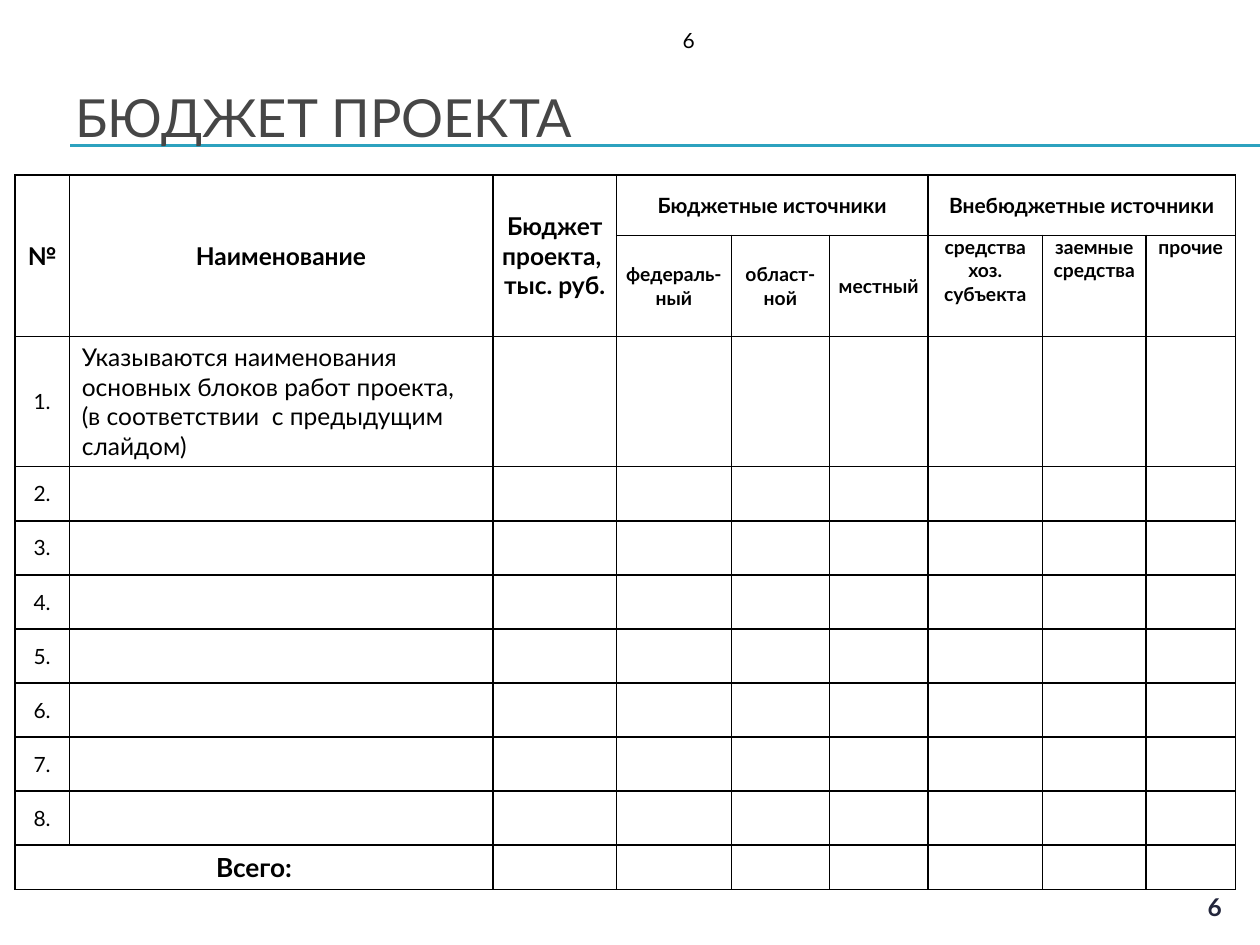
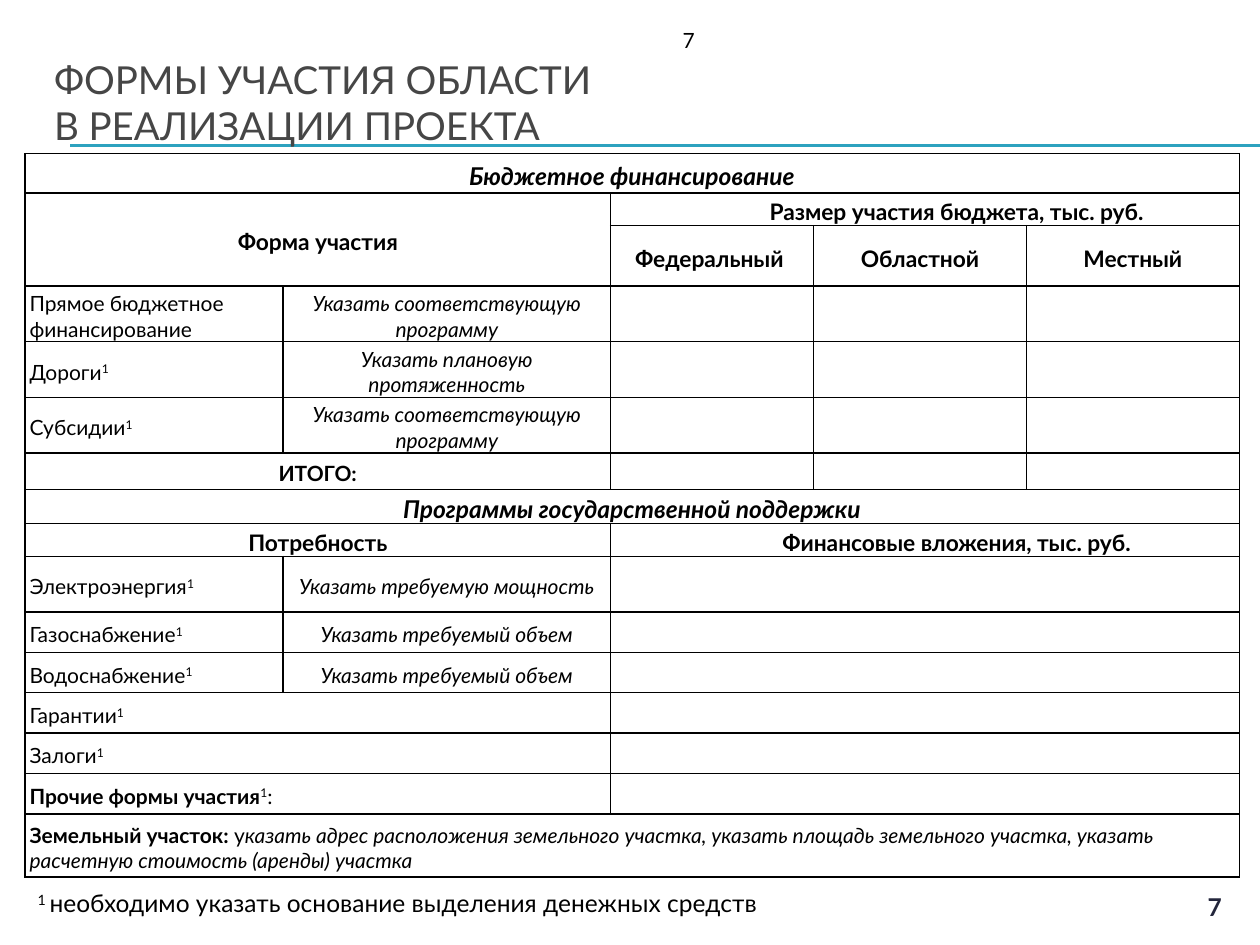
from lxml import etree
from pptx import Presentation
from pptx.dml.color import RGBColor
from pptx.enum.shapes import MSO_CONNECTOR
from pptx.enum.text import MSO_ANCHOR as Anchor, PP_ALIGN as Align
from pptx.oxml import parse_xml
from pptx.oxml.ns import nsdecls, qn
from pptx.util import Pt

FONT = "Lato"
BLACK = RGBColor(0x00, 0x00, 0x00)
TITLE_GREY = RGBColor(0x46, 0x46, 0x46)
RULE_TEAL = RGBColor(0x2D, 0xA2, 0xBF)
NUMBER_NAVY = RGBColor(0x23, 0x26, 0x3C)

SLIDE_WIDTH, SLIDE_HEIGHT = 720, 540
RULE_LEFT, RULE_TOPS = 40.3, (82.8, 83.5)
TOP_NUMBER_BOX = (383, 12.2, 21.6, 21.6)
BOTTOM_NUMBER_BOX = (680.4, 506.2, 27.4, 22.3)
TIGHT = (2.7, 2.7, 2.7, 0)
HEADER = (2.9, 3.6, 2.9, 3.6)
ROOMY = (7.2, 3.6, 7.2, 3.6)


def write_runs(paragraph, runs, size, color=BLACK, align=Align.LEFT):
    paragraph.alignment = align
    for text, style in runs:
        for index, line in enumerate(text.split("\n")):
            if index:
                paragraph.add_line_break()
            run = paragraph.add_run()
            run.text = line
            run.font.name = FONT
            run.font.size = Pt(size)
            run.font.color.rgb = color
            run.font.bold = "b" in style
            run.font.italic = "i" in style
            if "^" in style:
                run._r.get_or_add_rPr().set("baseline", "30000")


def add_text(slide, box, runs, size, color=BLACK, align=Align.LEFT,
             anchor=Anchor.TOP, wrap=True):
    text_frame = slide.shapes.add_textbox(*map(Pt, box)).text_frame
    text_frame.word_wrap = wrap
    text_frame.vertical_anchor = anchor
    write_runs(text_frame.paragraphs[0], runs, size, color, align)


def add_frame(presentation, number, title, title_box, title_size):
    slide = presentation.slides.add_slide(presentation.slide_layouts[6])
    for top in RULE_TOPS:
        rule = slide.shapes.add_connector(
            MSO_CONNECTOR.STRAIGHT, Pt(RULE_LEFT), Pt(top), Pt(SLIDE_WIDTH), Pt(top))
        rule.line.color.rgb = RULE_TEAL
        rule.line.width = Pt(0.75)
        etree.SubElement(rule._element.spPr, qn("a:effectLst"))
    add_text(slide, title_box, [(title, "")], title_size, TITLE_GREY,
             anchor=Anchor.MIDDLE)
    add_text(slide, TOP_NUMBER_BOX, [(str(number), "")], 12, wrap=False)
    add_text(slide, BOTTOM_NUMBER_BOX, [(str(number), "b")], 14, NUMBER_NAVY,
             Align.CENTER)
    return slide


def add_borders(cell):
    cell.fill.background()
    properties = cell._tc.get_or_add_tcPr()
    for index, side in enumerate("LRTB"):
        properties.insert(index, parse_xml(
            f'<a:ln{side} {nsdecls("a")} w="{Pt(1)}"><a:solidFill>'
            f'<a:srgbClr val="{BLACK}"/></a:solidFill></a:ln{side}>'))


def add_grid(slide, box, column_shares, row_shares):
    left, top, width, height = box
    table = slide.shapes.add_table(
        len(row_shares), len(column_shares), *map(Pt, box)).table
    table.first_row = table.horz_banding = False
    for column, share in zip(table.columns, column_shares):
        column.width = Pt(width * share / sum(column_shares))
    for row, share in zip(table.rows, row_shares):
        row.height = Pt(height * share / sum(row_shares))
    for cell in table.iter_cells():
        add_borders(cell)
        end = etree.SubElement(cell.text_frame.paragraphs[0]._p, qn("a:endParaRPr"))
        end.set("sz", "1000")
    return table


def merge(table, row, column, rows, columns):
    table.cell(row, column).merge(table.cell(row + rows - 1, column + columns - 1))


def fill_cell(table, row, column, runs, size, align=Align.CENTER,
              insets=TIGHT, anchor=Anchor.MIDDLE, indent=0):
    cell = table.cell(row, column)
    cell.margin_left, cell.margin_top, cell.margin_right, cell.margin_bottom = map(Pt, insets)
    cell.vertical_anchor = anchor
    paragraph = cell.text_frame.paragraphs[0]
    write_runs(paragraph, runs, size, align=align)
    if indent:
        paragraph._p.get_or_add_pPr().set("marL", str(Pt(indent)))


def noted(text, style=""):
    return [(text, style), ("1", "^")]


def add_budget_table(slide, box):
    table = add_grid(slide, box, (43, 336, 98, 91, 78, 78, 91, 82, 71),
                     (48, 80, 103) + (43,) * 7 + (35,))
    for column, heading in enumerate(
            ("№", "Наименование", "Бюджет проекта, \nтыс. руб.")):
        merge(table, 0, column, 2, 1)
        fill_cell(table, 0, column, [(heading, "b")], 14, insets=HEADER)
    for column, heading in ((3, "Бюджетные источники"), (6, "Внебюджетные источники")):
        merge(table, 0, column, 1, 3)
        fill_cell(table, 0, column, [(heading, "b")], 12, insets=HEADER)
    for column, source in enumerate(("федераль-ный", "област- ной", "местный"), 3):
        fill_cell(table, 1, column, [(source, "b")], 11, insets=HEADER)
    for column, source, side in ((6, "средства хоз. субъекта", 5.4),
                                 (7, "заемные средства", 2.9), (8, "прочие", 5.4)):
        fill_cell(table, 1, column, [(source, "b")], 11,
                  insets=(side, 0, side, 0), anchor=Anchor.TOP)
    for item in range(1, 9):
        fill_cell(table, item + 1, 0, [(f"{item}.", "")], 12, insets=ROOMY)
    fill_cell(table, 2, 1, [(
        "Указываются наименования основных блоков работ проекта,\n"
        "(в соответствии  с предыдущим слайдом)", "")], 14, Align.LEFT, ROOMY)
    merge(table, 10, 0, 1, 2)
    fill_cell(table, 10, 0, [("Всего:", "b")], 15, insets=ROOMY)


def add_support_table(slide, box):
    table = add_grid(slide, box, (205, 260, 161, 169, 169),
                     (31, 26, 48, 44, 44, 44, 29, 27, 26, 44) + (32,) * 5 + (50,))
    for row, section in ((0, "Бюджетное финансирование"),
                         (7, "Программы государственной поддержки")):
        merge(table, row, 0, 1, 5)
        fill_cell(table, row, 0, [(section, "bi")], 14)
    for row, rows, need, amount in (
            (1, 2, "Форма участия", "Размер участия бюджета, тыс. руб."),
            (8, 1, "Потребность", "Финансовые вложения, тыс. руб.")):
        merge(table, row, 0, rows, 2)
        merge(table, row, 2, 1, 3)
        fill_cell(table, row, 0, [(need, "b")], 13)
        fill_cell(table, row, 2, [(amount, "b")], 13, indent=36)
    for column, level in enumerate(("Федеральный ", "Областной", "Местный"), 2):
        fill_cell(table, 2, column, [(level, "b")], 13)
    for row, form, hint in (
            (3, [("Прямое бюджетное финансирование", "")],
             "Указать соответствующую программу"),
            (4, noted("Дороги"), "Указать плановую протяженность"),
            (5, noted("Субсидии"), "Указать соответствующую программу"),
            (9, noted("Электроэнергия"), "Указать требуемую мощность"),
            (10, noted("Газоснабжение"), "Указать требуемый объем"),
            (11, noted("Водоснабжение"), "Указать требуемый объем")):
        fill_cell(table, row, 0, form, 12, Align.LEFT)
        fill_cell(table, row, 1, [(hint, "i")], 12)
    for row in range(9, 15):
        merge(table, row, 2, 1, 3)
    for row, form in enumerate((noted("Гарантии"), noted("Залоги"),
                                noted("Прочие формы участия", "b") + [(":", "")]), 12):
        merge(table, row, 0, 1, 2)
        fill_cell(table, row, 0, form, 12, Align.LEFT)
    merge(table, 6, 0, 1, 2)
    fill_cell(table, 6, 0, [("ИТОГО:", "b")], 12)
    merge(table, 15, 0, 1, 5)
    fill_cell(table, 15, 0, [
        ("Земельный участок: ", "b"), ("у", ""),
        ("казать адрес расположения земельного участка, указать площадь "
         "земельного участка, указать расчетную стоимость (аренды) участка", "i"),
    ], 12, Align.LEFT)


def main():
    presentation = Presentation()
    presentation.slide_width, presentation.slide_height = Pt(SLIDE_WIDTH), Pt(SLIDE_HEIGHT)

    budget = add_frame(presentation, 6, "БЮДЖЕТ ПРОЕКТА", (36, 44.6, 648, 44), 30)
    add_budget_table(budget, (8.6, 100.1, 697.5, 407.5))

    support = add_frame(presentation, 7, "ФОРМЫ УЧАСТИЯ ОБЛАСТИ\nВ РЕАЛИЗАЦИИ ПРОЕКТА",
                        (23.8, 25.2, 684, 66.2), 22)
    add_text(support, (14.4, 504, 430.5, 24.5), [
        ("1 ", "^"), ("необходимо указать основание выделения денежных средств", ""),
    ], 14, wrap=False)
    add_support_table(support, (14.2, 87.8, 694, 413.5))

    presentation.save("out.pptx")


if __name__ == "__main__":
    main()
